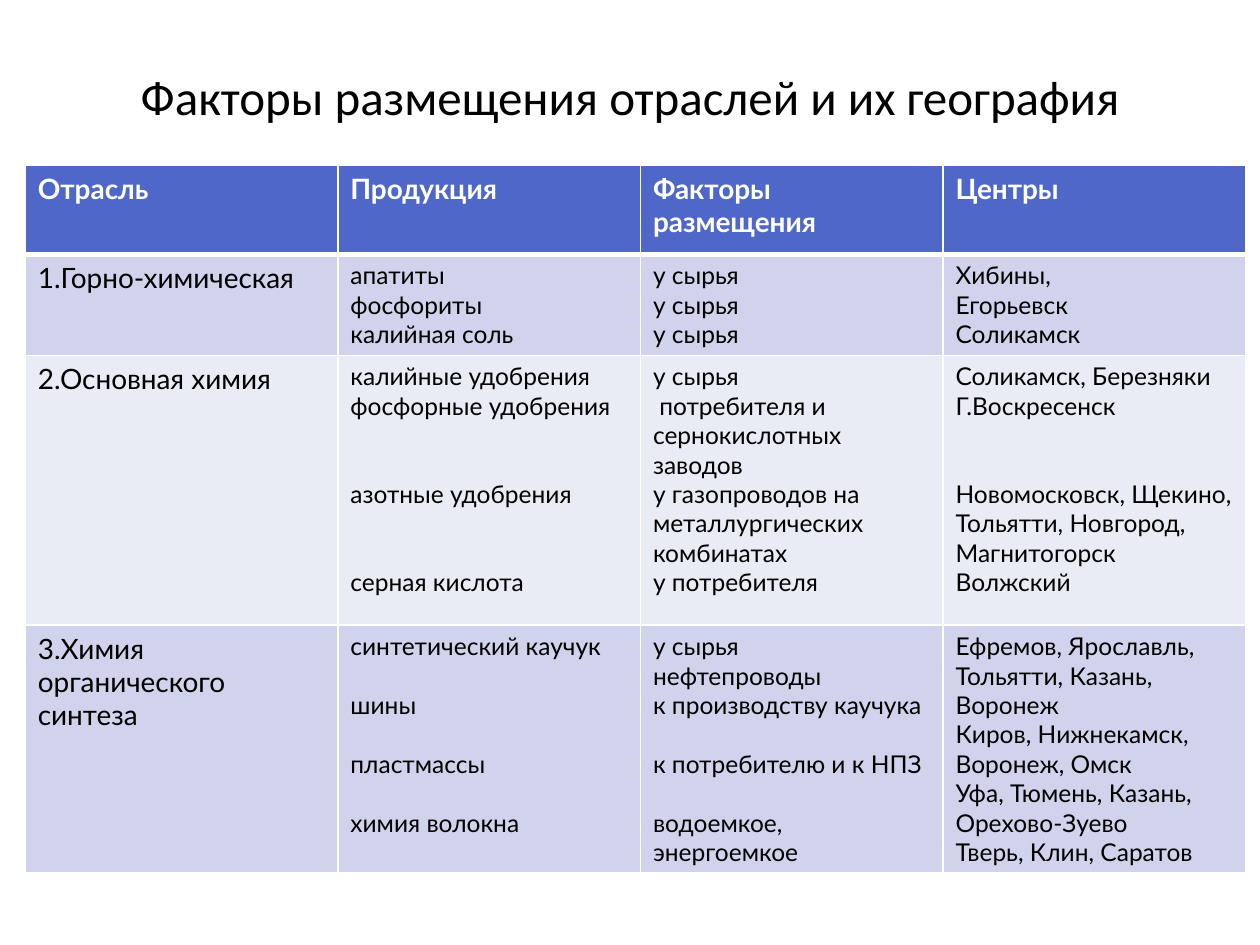
from lxml import etree
from pptx import Presentation
from pptx.dml.color import RGBColor
from pptx.enum import text as t
from pptx.oxml.ns import qn
from pptx.util import Cm, Pt

WHITE = RGBColor(0xFF, 0xFF, 0xFF)
BLACK = RGBColor(0, 0, 0)
BLUE = RGBColor(0x4E, 0x67, 0xC8)
LILAC = RGBColor(0xD0, 0xD3, 0xEB)
PALE = RGBColor(0xE9, 0xEB, 0xF5)
LEADING = 1.2


def write(frame, lines, size=14, font="Lato", color=BLACK, bold=False, align=t.PP_ALIGN.LEFT):
    """Write one paragraph per line; each empty line becomes space before the next."""
    frame.word_wrap = True
    gap = 0
    para = None
    for line in lines:
        if not line:
            gap += 1
            continue
        para = frame.add_paragraph() if para else frame.paragraphs[0]
        para.alignment = align
        para.space_before = Pt(gap * size * LEADING)
        gap = 0
        run = para.add_run()
        run.text = line
        run.font.size = Pt(size)
        run.font.name = font
        run.font.bold = bold
        run.font.color.rgb = color


def edge(cell, side, width):
    line = etree.SubElement(cell._tc.get_or_add_tcPr(), qn("a:ln" + side), w=str(Pt(width)))
    fill = etree.SubElement(line, qn("a:solidFill"))
    etree.SubElement(fill, qn("a:srgbClr"), val=str(WHITE))


prs = Presentation()
prs.slide_width, prs.slide_height = Cm(25.4), Cm(19.05)
slide = prs.slides.add_slide(prs.slide_layouts[6])

title = slide.shapes.add_textbox(Cm(1.27), Cm(0.76), Cm(22.86), Cm(2.36)).text_frame
title.vertical_anchor = t.MSO_ANCHOR.MIDDLE
write(title, ["Факторы размещения отраслей и их география"],
      size=28, font="Calibri", align=t.PP_ALIGN.CENTER)

rows = [
    [["Отрасль"], ["Продукция"], ["Факторы размещения"], ["Центры"]],
    [["1.Горно-химическая"],
     ["апатиты", "фосфориты", "калийная соль"],
     ["у сырья"] * 3,
     ["Хибины,", "Егорьевск", "Соликамск"]],
    [["2.Основная химия"],
     ["калийные удобрения", "фосфорные удобрения", "", "",
      "азотные удобрения", "", "", "серная кислота"],
     ["у сырья", " потребителя и сернокислотных заводов",
      "у газопроводов на металлургических комбинатах", "у потребителя"],
     ["Соликамск, Березняки", "Г.Воскресенск", "", "",
      "Новомосковск, Щекино, Тольятти, Новгород, Магнитогорск", "Волжский"]],
    [["3.Химия органического синтеза"],
     ["синтетический каучук", "", "шины", "", "пластмассы", "", "химия волокна"],
     ["у сырья", "нефтепроводы", "к производству каучука", "",
      "к потребителю и к НПЗ", "", "водоемкое, энергоемкое"],
     ["Ефремов, Ярославль, Тольятти, Казань, Воронеж",
      "Киров, Нижнекамск, Воронеж, Омск",
      "Уфа, Тюмень, Казань, Орехово-Зуево",
      "Тверь, Клин, Саратов"]],
]
widths = [6.3, 6.1, 6.1, 6.1]
heights = [1.8, 2, 5.44, 4.85]
fills = [BLUE, LILAC, PALE, LILAC]

table = slide.shapes.add_table(len(rows), len(widths), Cm(0.51), Cm(3.33),
                               Cm(sum(widths)), Cm(sum(heights))).table
table.horz_banding = False
for col, width in zip(table.columns, widths):
    col.width = Cm(width)

for r, (row, high, fill) in enumerate(zip(rows, heights, fills)):
    table.rows[r].height = Cm(high)
    head = r == 0
    for c, lines in enumerate(row):
        cell = table.cell(r, c)
        edge(cell, "L", 1)
        edge(cell, "R", 1)
        edge(cell, "T", 3 if r == 1 else 1)
        edge(cell, "B", 3 if head else 1)
        cell.fill.solid()
        cell.fill.fore_color.rgb = fill
        write(cell.text_frame, lines, size=16 if head or c == 0 else 14,
              color=WHITE if head else BLACK, bold=head)

prs.save("out.pptx")
